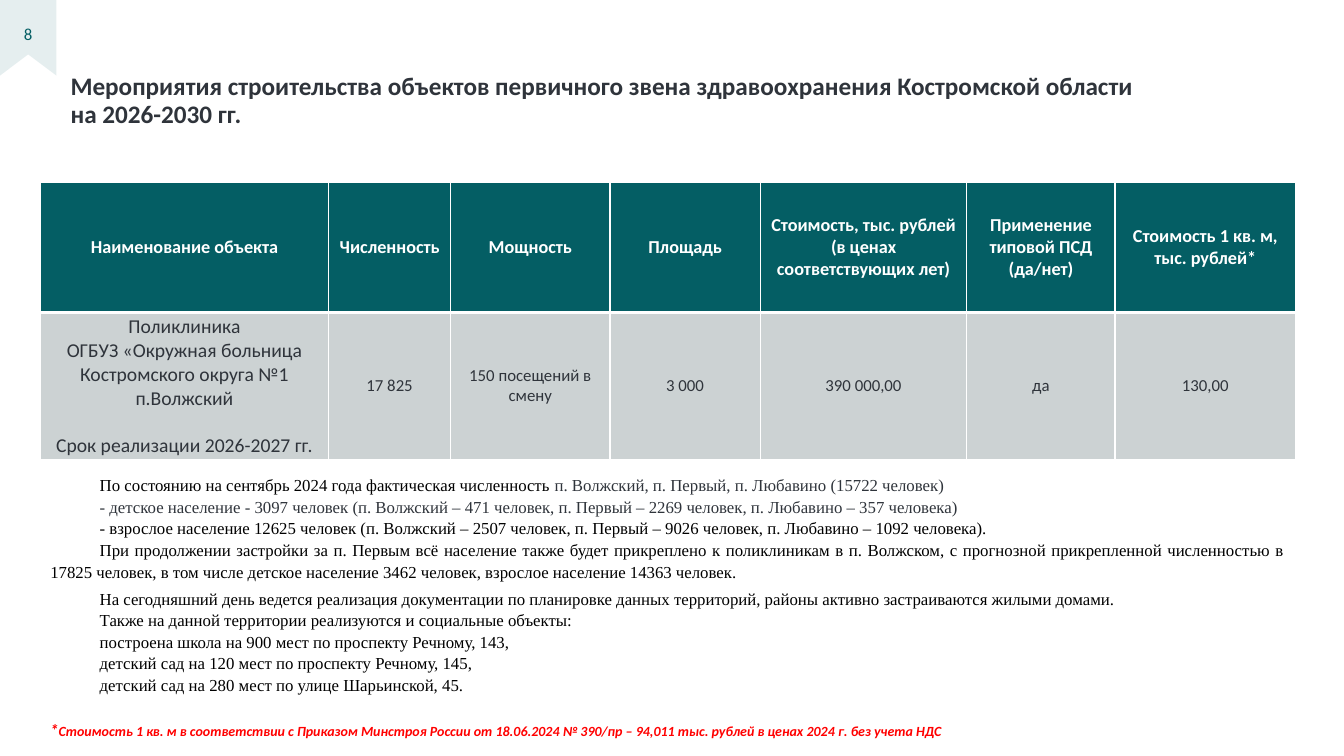
from dataclasses import dataclass
from typing import NamedTuple

from lxml.etree import SubElement
from pptx import Presentation
from pptx.dml.color import RGBColor
from pptx.enum.text import MSO_ANCHOR, PP_ALIGN
from pptx.oxml.ns import qn
from pptx.util import Emu, Pt

PX = 9144  # 100 px to the inch
TEAL, DARK, GREY = "045E64", "2F343B", "CCD2D3"
WHITE, BLACK, RED = "FFFFFF", "000000", "FF0000"


class Bit(NamedTuple):
    text: str
    color: str = ""
    size: int = 0


@dataclass
class Para:
    bits: list[Bit]
    before: int = 0


@dataclass
class Col:
    width: int
    head: list[Para]
    value: list[Para]


def px(n: int) -> Emu:
    return Emu(n * PX)


def rgb(code: str) -> RGBColor:
    return RGBColor.from_string(code)


def para(text: str, color: str = "", before: int = 0) -> Para:
    return Para([Bit(text, color)], before)


def inset(item, left: int, top: int, right: int, bottom: int) -> None:
    item.margin_left, item.margin_top = px(left), px(top)
    item.margin_right, item.margin_bottom = px(right), px(bottom)


def write(frame, paras: list[Para], *, size: int, color: str, font: str = "Calibri",
          bold: bool = False, italic: bool = False, align=PP_ALIGN.LEFT,
          lead: float = 1.0, indent: int = 0) -> None:
    """Fill a text frame; a line feed in a bit becomes a line break."""
    for i, item in enumerate(paras):
        p = frame.add_paragraph() if i else frame.paragraphs[0]
        p.alignment, p.line_spacing = align, lead
        p.space_before = Pt(item.before)
        if indent:
            props = p._p.get_or_add_pPr()
            props.set("marL", "0")
            props.set("indent", str(px(indent)))
        for bit in item.bits:
            for k, line in enumerate(bit.text.split("\n")):
                if k:
                    p.add_line_break()
                run = p.add_run()
                run.text = line
                face = run.font
                face.name, face.size = font, Pt(bit.size or size)
                face.bold, face.italic = bold, italic
                face.color.rgb = rgb(bit.color or color)


def box(slide, left: int, top: int, width: int, height: int):
    frame = slide.shapes.add_textbox(px(left), px(top), px(width), px(height)).text_frame
    frame.word_wrap = True
    return frame


def edge(cell, **sides: int) -> None:
    """Draw white borders; sides are L, R, T, B in that order, in points."""
    props = cell._tc.get_or_add_tcPr()
    for i, (side, width) in enumerate(sides.items()):
        line = props.makeelement(qn(f"a:ln{side}"), {"w": str(Pt(width))})
        fill = SubElement(line, qn("a:solidFill"))
        SubElement(fill, qn("a:srgbClr"), val=WHITE)
        props.insert(i, line)


def ribbon(slide, number: str) -> None:
    path = slide.shapes.build_freeform(0, 0, scale=PX)
    path.add_line_segments([(0, 75), (28, 54), (56, 75), (56, 0)], close=True)
    shape = path.convert_to_shape()
    shape.shadow.inherit = False
    shape.line.fill.background()
    shape.fill.solid()
    shape.fill.fore_color.rgb = rgb(TEAL)
    tint = next(shape._element.spPr.iter(qn("a:srgbClr")))
    SubElement(tint, qn("a:alpha"), val="10000")
    frame = shape.text_frame
    frame.vertical_anchor = MSO_ANCHOR.MIDDLE
    inset(frame, 10, 8, 10, 16)
    write(frame, [para(number)], size=12, color=TEAL, align=PP_ALIGN.CENTER)


COLS = [
    Col(286, [para("Наименование объекта")], [
        para("Поликлиника\nОГБУЗ «Окружная больница Костромского округа №1"),
        para("п.Волжский"),
        para("Срок реализации 2026-2027 гг.", before=17)]),
    Col(121, [para("Численность")], [para("17 825")]),
    Col(158, [para("Мощность")], [para("150 посещений в смену")]),
    Col(149, [para("Площадь")], [para("3 000")]),
    Col(205, [para("Стоимость, тыс. рублей"), para("(в ценах соответствующих лет)")],
        [para("390 000,00")]),
    Col(147, [para("Применение типовой ПСД (да/нет)")], [para("да")]),
    Col(179, [para("Стоимость 1 кв. м, тыс. рублей*")], [para("130,00")]),
]

BODY = [
    Para([Bit("По состоянию на сентябрь 2024 года фактическая численность "),
          Bit("п. Волжский, п. Первый, п. Любавино (15722 человек)", DARK)]),
    para("- детское население - 3097 человек (п. Волжский – 471 человек, "
         "п. Первый – 2269 человек, п. Любавино – 357 человека)", DARK),
    para("- взрослое население 12625 человек (п. Волжский – 2507 человек, "
         "п. Первый – 9026 человек, п. Любавино – 1092 человека)."),
    para("При продолжении застройки за п. Первым всё население также будет прикреплено "
         "к поликлиникам в п. Волжском, с прогнозной прикрепленной численностью в 17825 "
         "человек, в том числе детское население 3462 человек, взрослое население "
         "14363 человек."),
    para("На сегодняшний день ведется реализация документации по планировке данных "
         "территорий, районы активно застраиваются жилыми домами.", before=4),
    para("Также на данной территории реализуются и социальные объекты:"),
    para("построена школа на 900 мест по проспекту Речному, 143,"),
    para("детский сад на 120 мест по проспекту Речному, 145,"),
    para("детский сад на 280 мест по улице Шарьинской, 45."),
]


def grid(slide) -> None:
    total = sum(col.width for col in COLS)
    table = slide.shapes.add_table(2, len(COLS), px(40), px(181), px(total), px(275)).table
    table.rows[0].height, table.rows[1].height = px(129), px(146)
    for i, col in enumerate(COLS):
        table.columns[i].width = px(col.width)
        head, cell = table.cell(0, i), table.cell(1, i)
        for part, fill in ((head, TEAL), (cell, GREY)):
            part.fill.solid()
            part.fill.fore_color.rgb = rgb(fill)
            part.vertical_anchor = MSO_ANCHOR.MIDDLE
        edge(head, L=1, R=1, T=1, B=3)
        edge(cell, L=1, R=1, T=3, B=1)
        write(head.text_frame, col.head, size=13, color=WHITE, bold=True,
              align=PP_ALIGN.CENTER)
        if i == 0:
            inset(cell, 1, 1, 1, 0)
        write(cell.text_frame, col.value, size=12 if i else 14, color=DARK,
              align=PP_ALIGN.CENTER)


def main() -> None:
    deck = Presentation()
    deck.slide_width, deck.slide_height = px(1333), px(750)
    slide = deck.slides.add_slide(deck.slide_layouts[6])
    ribbon(slide, "8")

    title = box(slide, 70, 76, 1193, 49)
    title.vertical_anchor = MSO_ANCHOR.MIDDLE
    inset(title, 0, 0, 0, 0)
    write(title, [para("Мероприятия строительства объектов первичного звена "
                       "здравоохранения Костромской области\nна 2026-2030 гг.")],
          size=18, color=DARK, bold=True, lead=0.9)

    grid(slide)
    note = Para([Bit("*", size=12),
                 Bit("Стоимость 1 кв. м в соответствии с Приказом Минстроя России от "
                     "18.06.2024 № 390/пр – 94,011 тыс. рублей в ценах 2024 г. "
                     "без учета НДС")])
    write(box(slide, 40, 709, 1114, 30), [note], size=10, color=RED, bold=True, italic=True)
    write(box(slide, 40, 465, 1245, 230), BODY, size=12, color=BLACK,
          font="Times New Roman", align=PP_ALIGN.JUSTIFY, lead=1.07, indent=49)
    deck.save("out.pptx")


if __name__ == "__main__":
    main()
